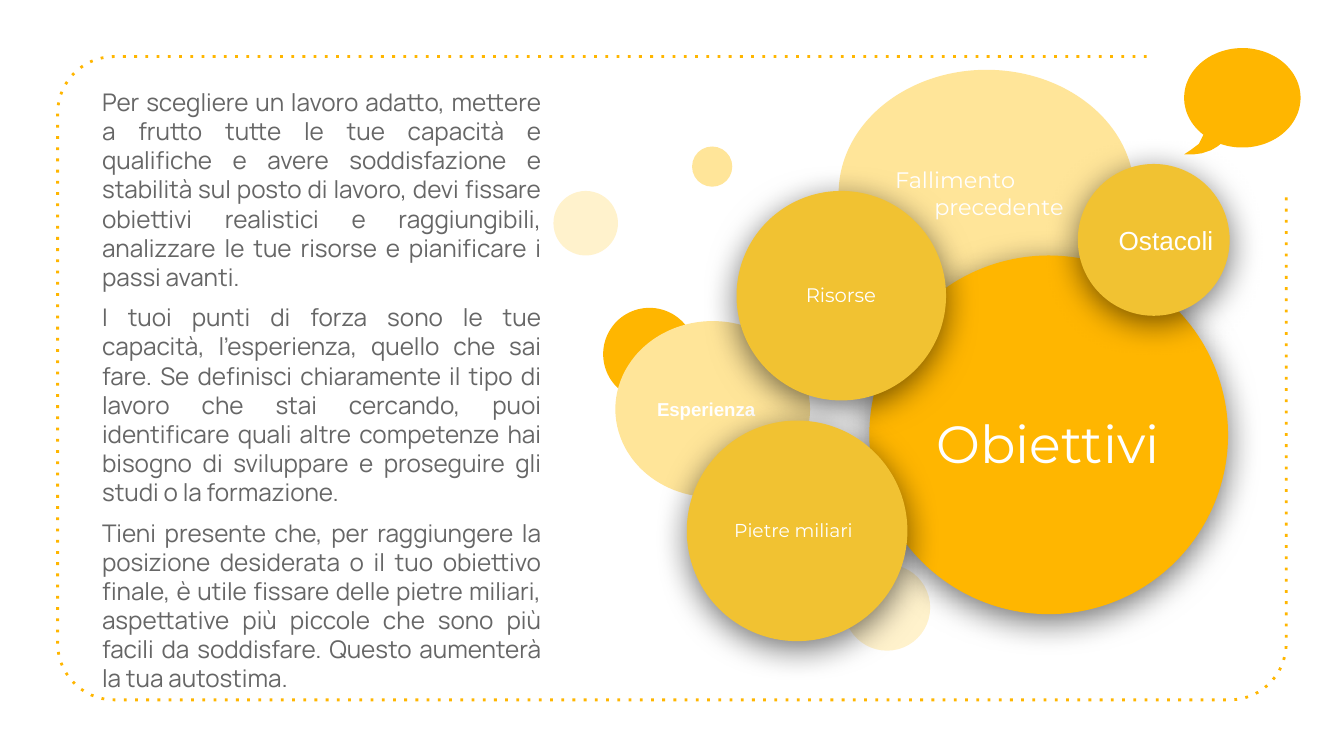
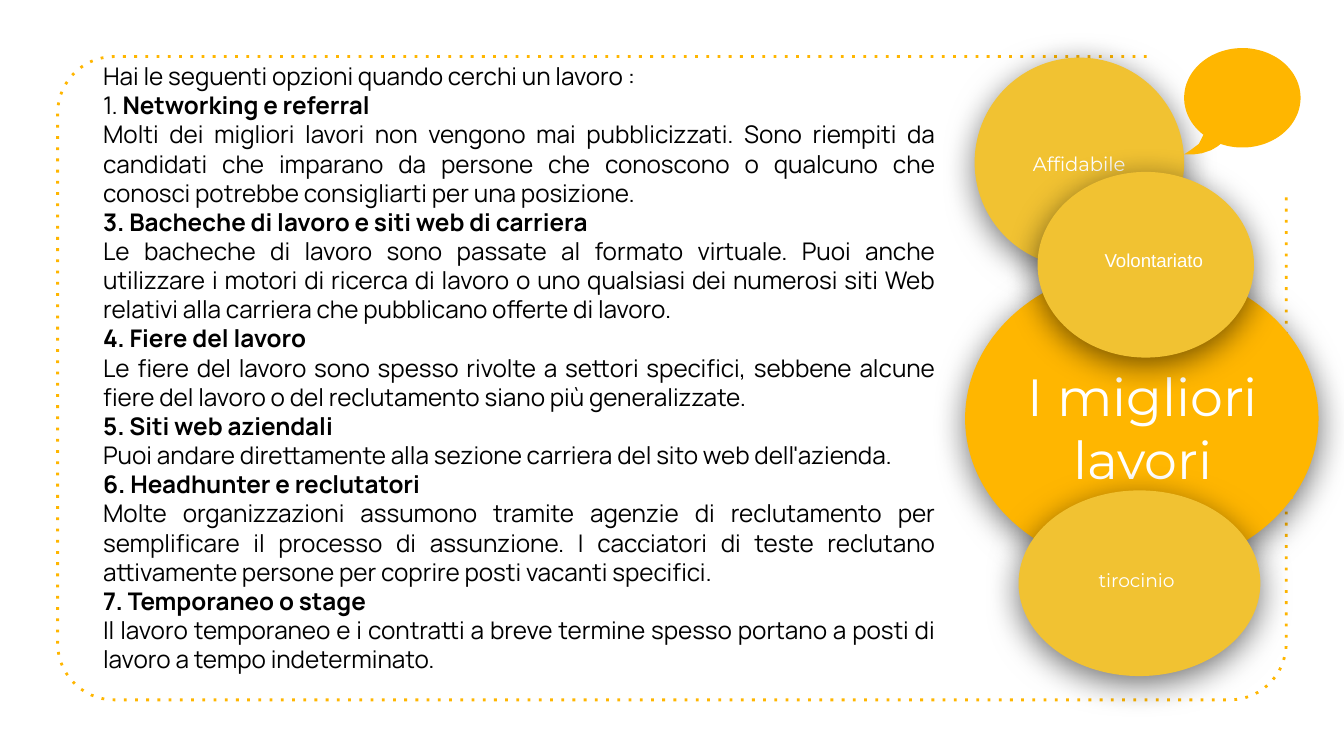
import math
from dataclasses import dataclass

import lxml.etree
import pptx
import pptx.dml.color
import pptx.enum.shapes
import pptx.enum.text
import pptx.oxml.ns
import pptx.util

Cm = pptx.util.Cm
ALIGN = pptx.enum.text.PP_ALIGN
ANCHOR = pptx.enum.text.MSO_ANCHOR
SHAPE = pptx.enum.shapes.MSO_SHAPE


@dataclass(frozen=True)
class Theme:
    orange: str = "FFB600"
    gold: str = "F1C232"
    sand: str = "FFE599"
    cream: str = "FFF2CC"
    white: str = "FFFFFF"
    grey: str = "666666"
    black: str = "000000"
    body_font: str = "Manrope"
    label_font: str = "Montserrat"
    plain_font: str = "Arial"
    headline: float = 28
    large: float = 14
    body: float = 13
    medium: float = 12
    label: float = 10.5
    small: float = 10


def color(value):
    return pptx.dml.color.RGBColor.from_string(value)


def add_element(parent, tag, **attributes):
    element = lxml.etree.SubElement(parent, pptx.oxml.ns.qn(tag))
    for name, value in attributes.items():
        element.set(name, str(value))
    return element


def set_all(target, values):
    for name, value in values.items():
        setattr(target, name, value)


def arc(center_x, center_y, radius_x, radius_y, start, end, steps):
    angles = [math.radians(start + (end - start) * step / steps) for step in range(steps + 1)]
    return [(center_x + radius_x * math.cos(angle), center_y + radius_y * math.sin(angle))
            for angle in angles]


class SlideBuilder:
    def __init__(self, theme):
        self.theme = theme
        self.deck = pptx.Presentation()
        set_all(self.deck, {"slide_width": Cm(25.4), "slide_height": Cm(14.29)})
        self.page = None
        self.shapes = None

    def new_page(self):
        self.page = self.deck.slides.add_slide(self.deck.slide_layouts[6])
        self.frame()

    def group(self):
        self.shapes = self.page.shapes.add_group_shape().shapes

    def outline(self, points, close):
        points = [(Cm(x), Cm(y)) for x, y in points]
        builder = self.page.shapes.build_freeform(*points[0])
        builder.add_line_segments(points[1:], close=close)
        shape = builder.convert_to_shape()
        shape.shadow.inherit = False
        return shape

    def frame(self):
        left, top, right, bottom, radius = 1.09, 1.07, 24.31, 13.23, 1.07
        points = [(21.67, top)]
        for x, y, start in [
            (left + radius, top + radius, 270),
            (left + radius, bottom - radius, 180),
            (right - radius, bottom - radius, 90),
        ]:
            points += arc(x, y, radius, radius, start, start - 90, 15)
        points.append((right, 3.71))
        shape = self.outline(points, False)
        shape.fill.background()
        shape.line.color.rgb = color(self.theme.orange)
        shape.line.width = pptx.util.Pt(1.5)
        line = shape._element.spPr.find(pptx.oxml.ns.qn("a:ln"))
        add_element(line, "a:prstDash", val="dot")

    def speech_bubble(self):
        tail = [(23.01, 2.77), (22.89, 2.84), (22.71, 2.9), (22.56, 2.92),
                (22.38, 2.92), (22.5, 2.84), (22.66, 2.72)]
        shape = self.outline(arc(23.48, 1.85, 1.1, 0.94, 132, 472, 90) + tail, True)
        self.paint(shape, self.theme.orange)

    def paint(self, shape, fill):
        shape.fill.solid()
        shape.fill.fore_color.rgb = color(fill)
        shape.line.fill.background()

    def solid(self, kind, place, fill):
        shape = self.shapes.add_shape(kind, *map(Cm, place))
        shape.shadow.inherit = False
        self.paint(shape, fill)
        return shape

    def circle(self, x, y, width, height, fill, shadow=False):
        shape = self.solid(SHAPE.OVAL, (x, y, width, height), fill)
        if shadow:
            effects = shape._element.spPr.find(pptx.oxml.ns.qn("a:effectLst"))
            outer = add_element(effects, "a:outerShdw", blurRad=pptx.util.Pt(18),
                                dist=pptx.util.Pt(4), dir=90 * 60000,
                                algn="bl", rotWithShape=0)
            tint = add_element(outer, "a:srgbClr", val=self.theme.black)
            add_element(tint, "a:alpha", val=54000)
        return shape

    def add_text(self, box, paragraphs, size, font, ink, align, anchor, space=0):
        inset = Cm(0.25)
        frame = box.text_frame
        set_all(frame, {"word_wrap": True, "vertical_anchor": anchor,
                        "margin_left": inset, "margin_right": inset,
                        "margin_top": inset, "margin_bottom": inset})
        for index, spans in enumerate(paragraphs):
            para = frame.add_paragraph() if index else frame.paragraphs[0]
            para.alignment = align
            if index and space:
                para.space_before = pptx.util.Pt(space)
            for text, bold in spans:
                span = para.add_run()
                span.text = text
                set_all(span.font, {"size": pptx.util.Pt(size), "name": font, "bold": bold})
                span.font.color.rgb = color(ink)

    def caption(self, box, text, size, font=None, bold=False, align=ALIGN.CENTER):
        self.add_text(box, [[(text, bold)]], size, font or self.theme.label_font,
                      self.theme.white, align, ANCHOR.MIDDLE)

    def headline(self, circle, panel, text):
        self.group()
        self.circle(*circle, self.theme.orange, shadow=True)
        box = self.solid(SHAPE.RECTANGLE, panel, self.theme.orange)
        self.caption(box, text, self.theme.headline)

    def labelled_circle(self, circle, place, text, size, font=None):
        self.group()
        self.circle(*circle, self.theme.gold, shadow=True)
        self.caption(self.shapes.add_textbox(*map(Cm, place)), text, size, font)

    def body(self, place, paragraphs, ink, space=0):
        box = self.page.shapes.add_textbox(*map(Cm, place))
        self.add_text(box, paragraphs, self.theme.body, self.theme.body_font, ink,
                      ALIGN.JUSTIFY, ANCHOR.TOP, space)


GOALS = [
    "Per scegliere un lavoro adatto, mettere a frutto tutte le tue capacità e qualifiche e "
    "avere soddisfazione e stabilità sul posto di lavoro, devi fissare obiettivi realistici e "
    "raggiungibili, analizzare le tue risorse e pianificare i passi avanti.",
    "I tuoi punti di forza sono le tue capacità, l'esperienza, quello che sai fare. Se definisci "
    "chiaramente il tipo di lavoro che stai cercando, puoi identificare quali altre competenze "
    "hai bisogno di sviluppare e proseguire gli studi o la formazione.",
    "Tieni presente che, per raggiungere la posizione desiderata o il tuo obiettivo finale, è "
    "utile fissare delle pietre miliari, aspettative più piccole che sono più facili da "
    "soddisfare. Questo aumenterà la tua autostima.",
]

OPTIONS = [
    ("1.", " Networking e referral",
     "Molti dei migliori lavori non vengono mai pubblicizzati. Sono riempiti da candidati che "
     "imparano da persone che conoscono o qualcuno che conosci potrebbe consigliarti per una "
     "posizione."),
    ("", "3. Bacheche di lavoro e siti web di carriera",
     "Le bacheche di lavoro sono passate al formato virtuale. Puoi anche utilizzare i motori di "
     "ricerca di lavoro o uno qualsiasi dei numerosi siti Web relativi alla carriera che "
     "pubblicano offerte di lavoro."),
    ("", "4. Fiere del lavoro",
     "Le fiere del lavoro sono spesso rivolte a settori specifici, sebbene alcune fiere del "
     "lavoro o del reclutamento siano più generalizzate."),
    ("", "5. Siti web aziendali",
     "Puoi andare direttamente alla sezione carriera del sito web dell'azienda."),
    ("", "6. Headhunter e reclutatori",
     "Molte organizzazioni assumono tramite agenzie di reclutamento per semplificare il processo "
     "di assunzione. I cacciatori di teste reclutano attivamente persone per coprire posti "
     "vacanti specifici."),
    ("", "7. Temporaneo o stage",
     "Il lavoro temporaneo e i contratti a breve termine spesso portano a posti di lavoro a "
     "tempo indeterminato."),
]


def build_goals(slide):
    theme = slide.theme
    slide.new_page()
    slide.group()
    slide.circle(15.95, 10.67, 1.63, 1.63, theme.cream)
    slide.circle(10.46, 3.61, 1.22, 1.22, theme.cream)
    failure = slide.circle(15.85, 1.32, 5.59, 4.67, theme.sand)
    slide.caption(failure, "Fallimento precedente", theme.medium, align=ALIGN.LEFT)
    hanging = failure.text_frame.paragraphs[0]._p.get_or_add_pPr()
    hanging.set("marL", str(Cm(0.74)))
    hanging.set("indent", str(-Cm(0.74)))
    slide.circle(11.4, 5.82, 1.75, 1.75, theme.orange)
    slide.circle(13.08, 2.77, 0.76, 0.76, theme.sand)
    experience = slide.circle(11.63, 6.07, 3.68, 3.33, theme.sand)
    slide.caption(experience, "Esperienza", theme.small, theme.plain_font, True, ALIGN.LEFT)

    slide.headline((16.43, 4.83, 6.78, 6.78), (17.22, 6.76, 5.18, 3.23), "Obiettivi")
    slide.labelled_circle((13.92, 3.61, 3.96, 3.96), (14.55, 4.27, 2.69, 2.62),
                          "Risorse", theme.label)
    slide.labelled_circle((12.98, 7.95, 4.17, 4.17), (13.46, 8.71, 3.07, 2.62),
                          "Pietre miliari", theme.small)
    slide.labelled_circle((20.37, 3.1, 2.87, 2.87), (20.6, 3.58, 2.87, 1.91),
                          "Ostacoli", theme.large, theme.plain_font)
    slide.speech_bubble()
    slide.body((1.68, 1.4, 8.79, 11.51), [[(text, False)] for text in GOALS], theme.grey, 6)


def build_options(slide):
    theme = slide.theme
    slide.new_page()
    slide.headline((18.24, 5.05, 6.68, 5.72), (18.75, 6.71, 5.69, 2.72), "I migliori lavori")
    slide.labelled_circle((18.42, 1.09, 3.96, 3.96), (19.05, 1.78, 2.69, 2.62),
                          "Affidabile", theme.label)
    slide.labelled_circle((19.25, 9.27, 4.57, 3.51), (19.79, 9.86, 3.38, 2.21),
                          "tirocinio", theme.small)
    slide.labelled_circle((19.61, 3.25, 4.09, 3.51), (18.92, 3.96, 5.77, 1.91),
                          "Volontariato", theme.small, theme.plain_font)
    slide.speech_bubble()
    paragraphs = [[("Hai le seguenti opzioni quando cerchi un lavoro :", False)]]
    for number, title, text in OPTIONS:
        heading = [(number, False)] if number else []
        paragraphs += [heading + [(title, True)], [(text, False)]]
    slide.body((1.7, 0.91, 16.21, 11.89), paragraphs, theme.black)


def main():
    slide = SlideBuilder(Theme())
    build_goals(slide)
    build_options(slide)
    slide.deck.save("out.pptx")


if __name__ == "__main__":
    main()
